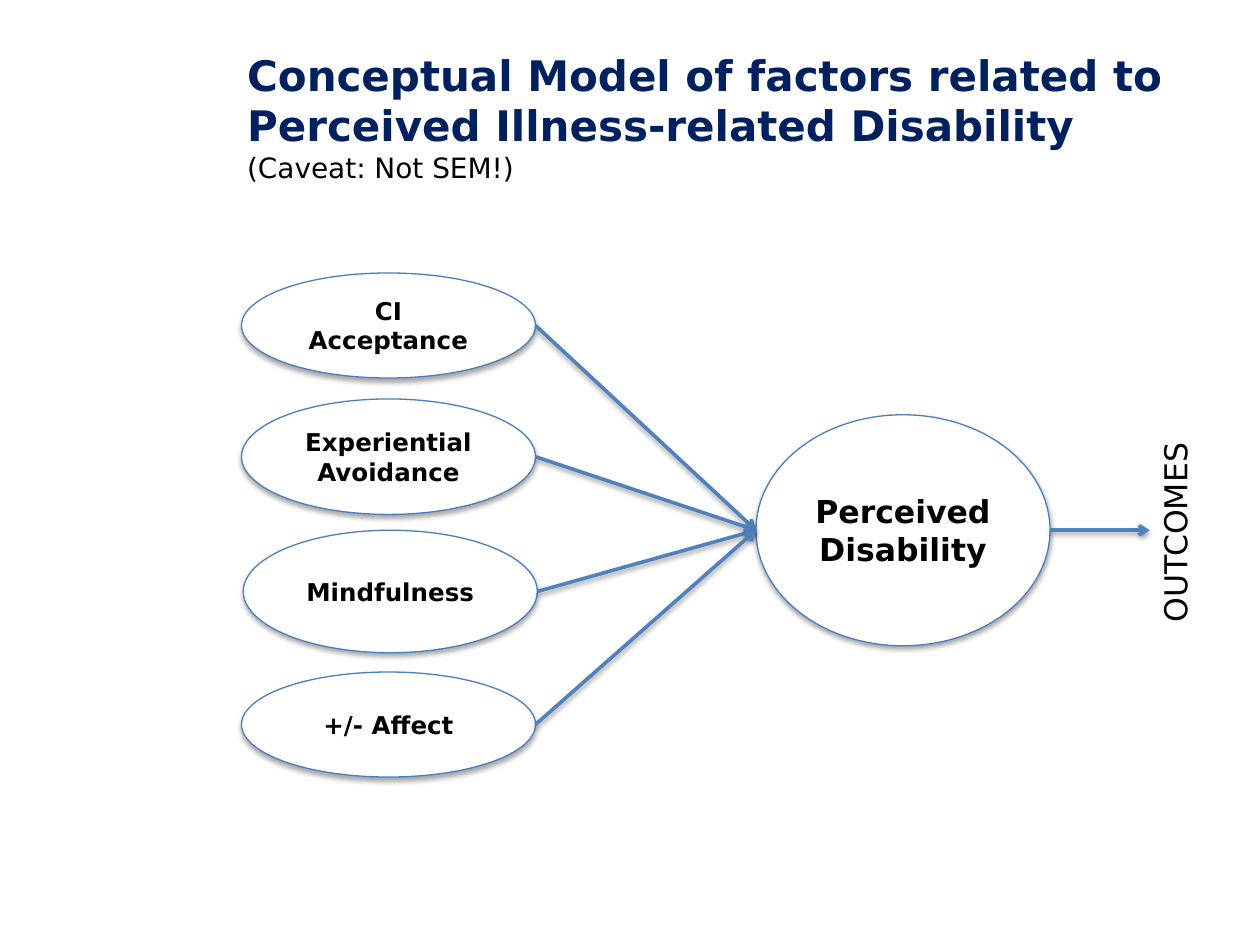
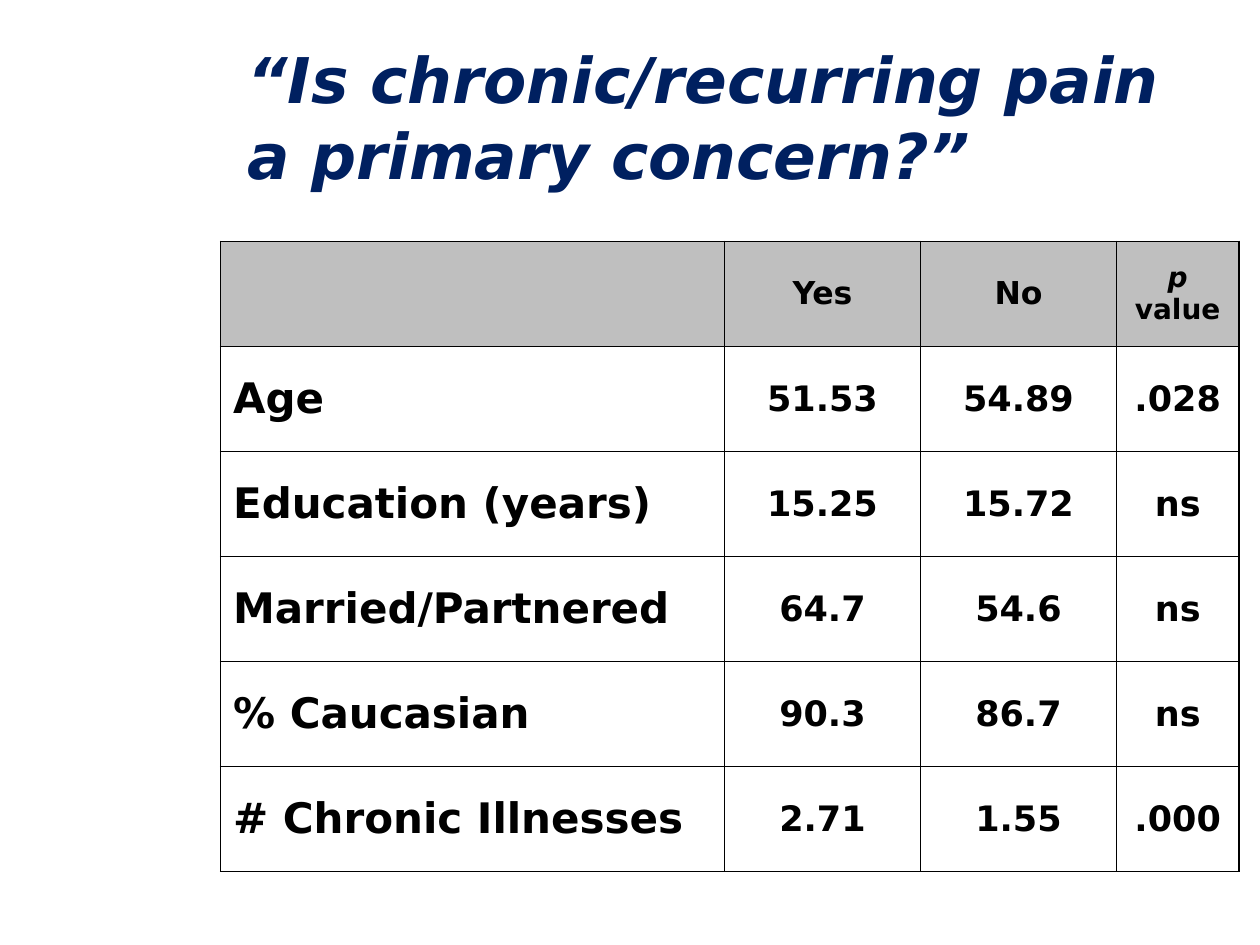
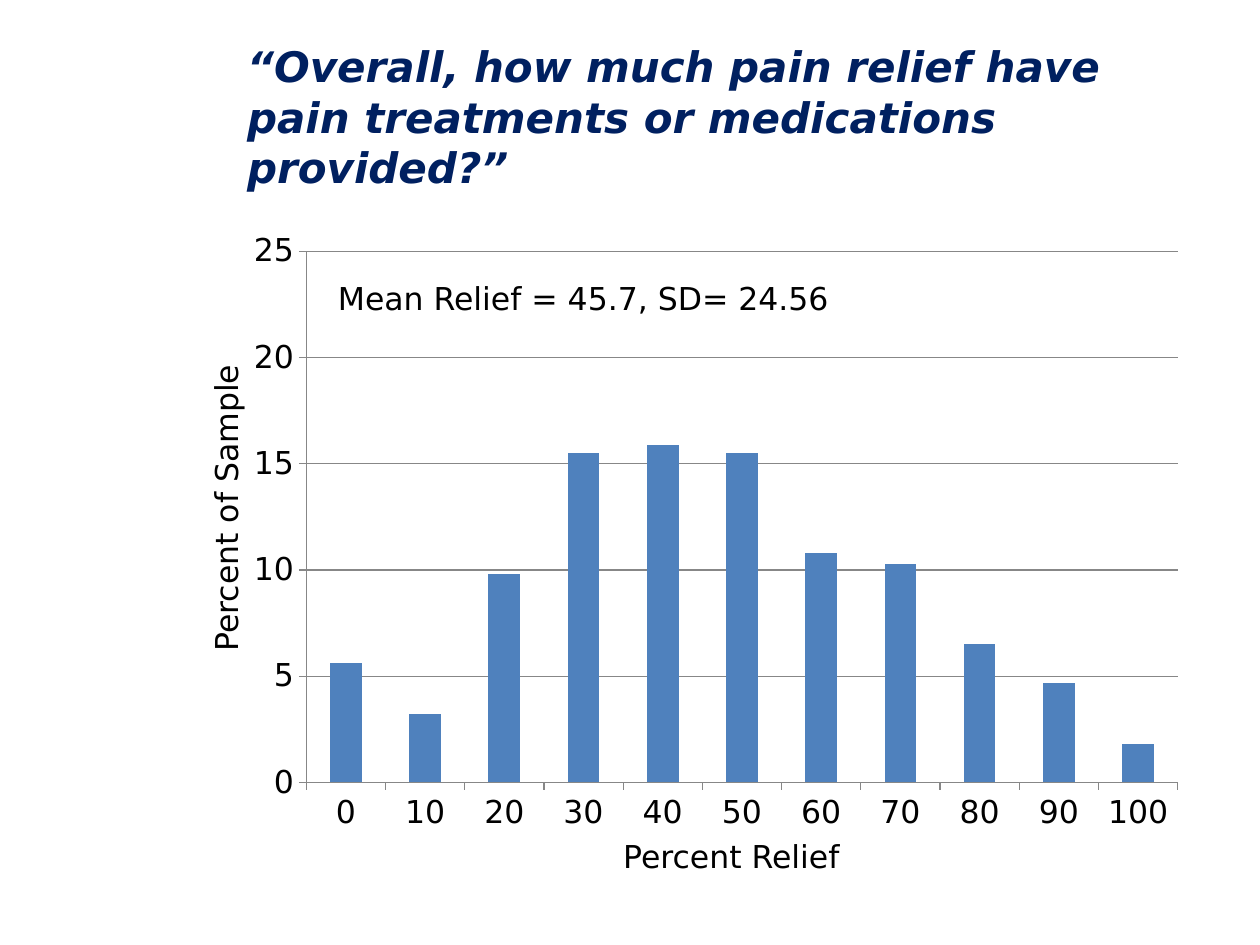
from lxml.etree import SubElement
from pptx import Presentation
from pptx.chart.data import CategoryChartData
from pptx.dml.color import RGBColor
from pptx.enum.chart import XL_CHART_TYPE, XL_TICK_MARK
from pptx.enum.shapes import MSO_CONNECTOR, MSO_SHAPE
from pptx.enum.text import MSO_ANCHOR, MSO_AUTO_SIZE, PP_ALIGN
from pptx.oxml import parse_xml
from pptx.oxml.ns import nsdecls, qn
from pptx.util import Pt

FONT = "DejaVu Sans"
NAVY, BLUE, OUTLINE = "002060", "4F81BD", "4B7EBC"
BLACK, WHITE, GREY, AXIS = "000000", "FFFFFF", "BFBFBF", "878787"
rgb = RGBColor.from_string


def write(p, text, size=18, color=BLACK, bold=False, italic=False, align=PP_ALIGN.LEFT):
    p.alignment = align
    r = p.add_run()
    r.text = text
    r.font.name, r.font.size = FONT, Pt(size)
    r.font.bold, r.font.italic = bold, italic
    r.font.color.rgb = rgb(color)


def add_shadow(sp, dist, opacity):
    sp._element.spPr.append(parse_xml(
        f'<a:effectLst {nsdecls("a")}><a:outerShdw blurRad="{Pt(3.1)}" dist="{Pt(dist)}" '
        f'dir="5400000" rotWithShape="0"><a:srgbClr val="{BLACK}">'
        f'<a:alpha val="{opacity * 1000}"/></a:srgbClr></a:outerShdw></a:effectLst>'))


prs = Presentation()
prs.slide_width, prs.slide_height = Pt(720), Pt(540)

# Slides and titles: text, size, italic
titles = [
    ("Conceptual Model of factors related to Perceived Illness-related Disability", 24, False),
    ("“Is chronic/recurring pain a primary concern?”", 36, True),
    ("“Overall, how much pain relief have pain treatments or medications provided?”", 24, True),
]
for text, size, italic in titles:
    s = prs.slides.add_slide(prs.slide_layouts[5])
    title = s.shapes.title
    title.left, title.top, title.width, title.height = Pt(134), Pt(21.6), Pt(550), Pt(90)
    tf = title.text_frame
    tf.word_wrap, tf.auto_size = True, MSO_AUTO_SIZE.NONE
    tf.vertical_anchor = MSO_ANCHOR.MIDDLE
    write(tf.paragraphs[0], text, size, NAVY, bold=True, italic=italic)
model_slide, table_slide, chart_slide = prs.slides

# Caveat under the model title
p = model_slide.shapes.title.text_frame.paragraphs[0]
p.add_line_break()
write(p, "(Caveat: Not SEM!)", 16)

# Model ellipses: text, left, top, height, size
ellipses = [
    ("CI Acceptance", 138, 156, 60, 14),
    ("Experiential Avoidance", 138, 228, 66, 14),
    ("Mindfulness", 139, 303, 70, 14),
    ("+/- Affect", 138, 384, 60, 14),
    ("Perceived Disability", 432, 237, 132, 18),
]
ELLIPSE_W, HUB_X, HUB_Y = 168, 432, 303
arrows = []
for text, x, y, h, size in ellipses:
    sp = model_slide.shapes.add_shape(MSO_SHAPE.OVAL, Pt(x), Pt(y), Pt(ELLIPSE_W), Pt(h))
    sp.fill.solid()
    sp.fill.fore_color.rgb = rgb(WHITE)
    sp.line.color.rgb = rgb(OUTLINE)
    sp.line.width = Pt(0.75)
    add_shadow(sp, 1.8, 35)
    tf = sp.text_frame
    tf.word_wrap, tf.vertical_anchor = True, MSO_ANCHOR.MIDDLE
    write(tf.paragraphs[0], text, size, bold=True, align=PP_ALIGN.CENTER)
    if x < HUB_X:
        arrows.append((x + ELLIPSE_W, y + h / 2, HUB_X))
arrows.append((HUB_X + ELLIPSE_W, HUB_Y, 657))

# Arrows from the factors to the hub, and from the hub to the outcomes
for x1, y1, x2 in arrows:
    arrow = model_slide.shapes.add_connector(
        MSO_CONNECTOR.STRAIGHT, Pt(x1), Pt(y1), Pt(x2), Pt(HUB_Y))
    arrow.line.color.rgb = rgb(BLUE)
    arrow.line.width = Pt(2)
    SubElement(arrow.line._get_or_add_ln(), qn("a:tailEnd"), type="arrow")
    add_shadow(arrow, 1.6, 38)

# Comparison table
rows = [
    ("", "Yes", "No", "p value"),
    ("Age", "51.53", "54.89", ".028"),
    ("Education (years)", "15.25", "15.72", "ns"),
    ("Married/Partnered", "64.7", "54.6", "ns"),
    ("% Caucasian", "90.3", "86.7", "ns"),
    ("# Chronic Illnesses", "2.71", "1.55", ".000"),
]
widths = [288, 112, 112, 70]
ROW_H = 60
table = table_slide.shapes.add_table(
    len(rows), len(widths), Pt(126), Pt(138), Pt(sum(widths)), Pt(ROW_H * len(rows))).table
table.first_row = table.horz_banding = False
for col, width in zip(table.columns, widths):
    col.width = Pt(width)
for i, row in enumerate(rows):
    table.rows[i].height = Pt(ROW_H)
    for j, text in enumerate(row):
        cell = table.cell(i, j)
        cell.vertical_anchor = MSO_ANCHOR.MIDDLE
        cell.fill.solid()
        cell.fill.fore_color.rgb = rgb(WHITE if i else GREY)
        tcPr = cell._tc.get_or_add_tcPr()
        for k, side in enumerate("LRTB"):
            tcPr.insert(k, parse_xml(
                f'<a:ln{side} {nsdecls("a")} w="{Pt(1)}"><a:solidFill>'
                f'<a:srgbClr val="{BLACK}"/></a:solidFill></a:ln{side}>'))
        p = cell.text_frame.paragraphs[0]
        if text == "p value":
            write(p, "p", 16, bold=True, italic=True)
            write(p, " value", 16, bold=True, align=PP_ALIGN.CENTER)
        elif text:
            size = 18 if i == 0 else 20 if j else 24
            write(p, text, size, bold=True, align=PP_ALIGN.CENTER if j else PP_ALIGN.LEFT)

# Pain relief chart
data = CategoryChartData()
data.categories = [str(n) for n in range(0, 101, 10)]
data.add_series("Series 1", (5.6, 3.2, 9.8, 15.5, 15.9, 15.5, 10.8, 10.3, 6.5, 4.7, 1.8))
chart = chart_slide.shapes.add_chart(
    XL_CHART_TYPE.COLUMN_CLUSTERED, Pt(134), Pt(126), Pt(550), Pt(356.4), data).chart
chart.has_legend = chart.has_title = False
chart.font.name, chart.font.size = FONT, Pt(18)
chart.font.color.rgb = rgb(BLACK)
plot = chart.plots[0]
plot.gap_width, plot.vary_by_categories = 150, False
fill = plot.series[0].format.fill
fill.solid()
fill.fore_color.rgb = rgb(BLUE)
value_axis = chart.value_axis
value_axis.minimum_scale, value_axis.maximum_scale, value_axis.major_unit = 0, 25, 5
value_axis.has_major_gridlines = True
for axis in (chart.category_axis, value_axis):
    axis.major_tick_mark = XL_TICK_MARK.OUTSIDE
for lined in (chart.category_axis, value_axis, value_axis.major_gridlines):
    lined.format.line.color.rgb = rgb(AXIS)
    lined.format.line.width = Pt(0.75)

# Free labels: slide, text, left, top, width, rotation
labels = [
    (model_slide, "OUTCOMES", 612, 288.5, 119, 270),
    (chart_slide, "Mean Relief = 45.7, SD= 24.56", 186, 156, 303, 0),
    (chart_slide, "Percent Relief", 349, 475, 140, 0),
    (chart_slide, "Percent of Sample", 38.5, 274.5, 181, 270),
]
for s, text, x, y, w, rotation in labels:
    box = s.shapes.add_textbox(Pt(x), Pt(y), Pt(w), Pt(29))
    box.rotation = rotation
    tf = box.text_frame
    tf.word_wrap, tf.auto_size = False, MSO_AUTO_SIZE.SHAPE_TO_FIT_TEXT
    write(tf.paragraphs[0], text)

prs.save("out.pptx")
